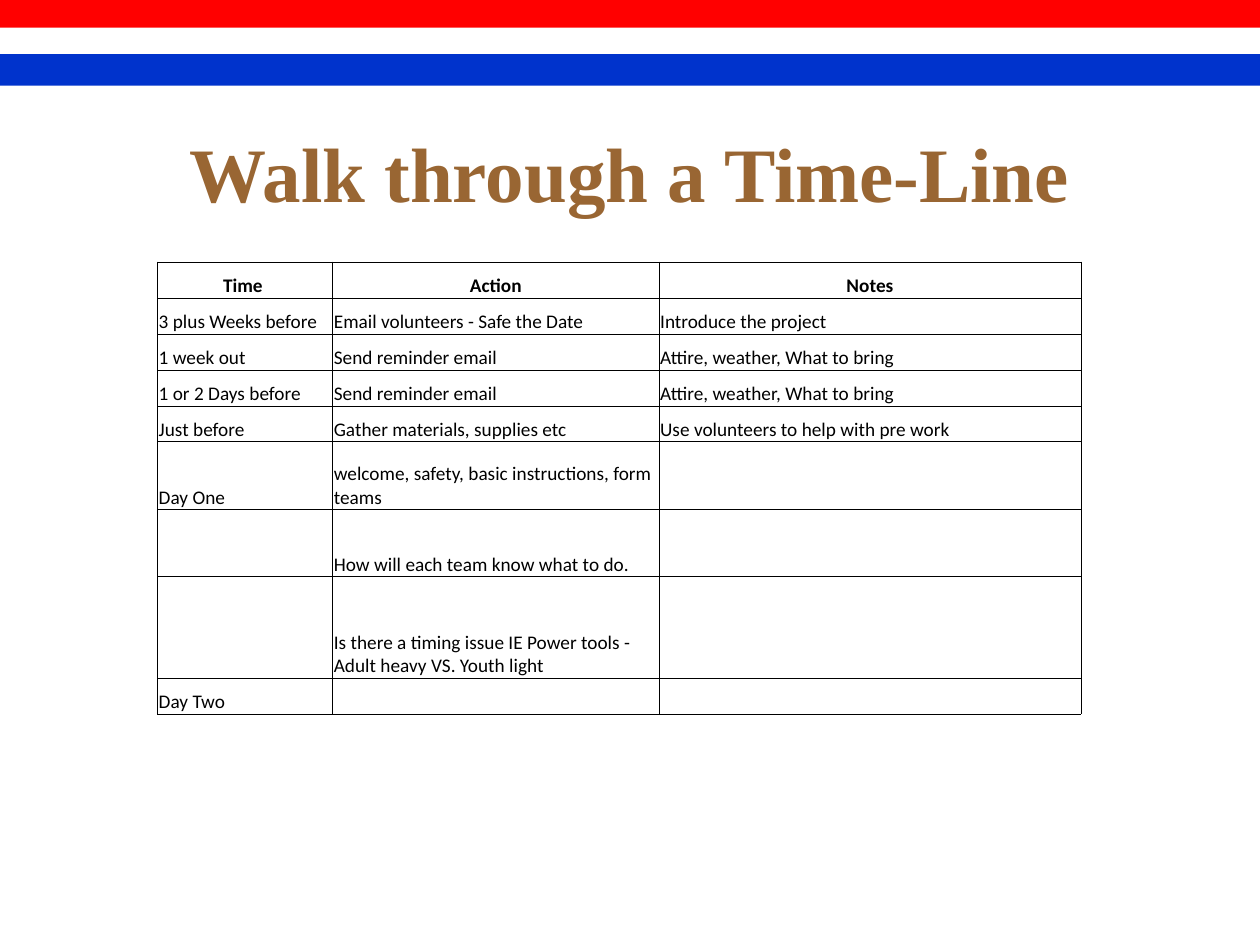
from dataclasses import dataclass
from typing import NamedTuple

from lxml.etree import SubElement
from pptx import Presentation
from pptx.dml.color import RGBColor as Color
from pptx.enum.shapes import MSO_SHAPE as Shape
from pptx.enum.text import MSO_ANCHOR as Anchor, PP_ALIGN as Align
from pptx.oxml.ns import qn
from pptx.util import Inches, Pt


@dataclass(frozen=True)
class Theme:
    red: str = "FF0000"
    white: str = "FFFFFF"
    blue: str = "0033CC"
    brown: str = "996633"
    black: str = "000000"
    title_font: str = "Times New Roman"
    table_font: str = "Calibri"
    title_size: int = 44
    table_size: int = 11
    border: float = 0.5


class Band(NamedTuple):
    top: float
    color: str


class Row(NamedTuple):
    weight: int
    time: str
    action: str
    notes: str


THEME = Theme()
WIDTH, HEIGHT = 10, 7.5
BAND_HEIGHT = 0.25
BANDS = [Band(0, THEME.red), Band(0.22, THEME.white), Band(0.43, THEME.blue)]
TABLE_LEFT, TABLE_TOP, TABLE_HEIGHT = 1.25, 2.08, 3.59
COLUMNS = [1.39, 2.59, 3.35]
SINGLE, DOUBLE, TRIPLE = 16, 30, 45
ROWS = [
    Row(SINGLE, "Time ", "Action", "Notes"),
    Row(SINGLE, "3 plus Weeks before", "Email volunteers - Safe the Date", "Introduce the project"),
    Row(SINGLE, "1 week out", "Send reminder email", "Attire, weather, What to bring"),
    Row(SINGLE, "1 or 2 Days before", "Send reminder email", "Attire, weather, What to bring"),
    Row(SINGLE, "Just before", "Gather materials, supplies etc", "Use volunteers to help with pre work"),
    Row(DOUBLE, "Day One", "welcome, safety, basic instructions, form teams", ""),
    Row(DOUBLE, "", "How will each team know what to do.", ""),
    Row(TRIPLE, "", "Is there a timing issue IE Power tools - Adult heavy VS. Youth light", ""),
    Row(SINGLE, "Day Two", "", ""),
]


def style_paragraph(para, font: str, size: int, color: str, bold: bool, align: Align) -> None:
    para.alignment = align
    para.font.name, para.font.size, para.font.bold = font, Pt(size), bold
    para.font.color.rgb = Color.from_string(color)


def draw_band(page, band: Band) -> None:
    box = page.shapes.add_shape(Shape.RECTANGLE, 0, Inches(band.top), Inches(WIDTH), Inches(BAND_HEIGHT))
    box.shadow.inherit = False
    box.fill.solid()
    box.fill.fore_color.rgb = Color.from_string(band.color)
    box.line.fill.background()


def draw_title(page, text: str) -> None:
    box = page.shapes.add_textbox(Inches(0.75), Inches(0.74), Inches(8.5), Inches(1.25))
    frame = box.text_frame
    frame.word_wrap = True
    frame.vertical_anchor = Anchor.MIDDLE
    frame.text = text
    style_paragraph(frame.paragraphs[0], THEME.title_font, THEME.title_size, THEME.brown, True, Align.CENTER)


def draw_borders(cell) -> None:
    properties = cell._tc.get_or_add_tcPr()
    for index, side in enumerate(("a:lnL", "a:lnR", "a:lnT", "a:lnB")):
        line = SubElement(properties, qn(side), w=str(Pt(THEME.border)))
        fill = SubElement(line, qn("a:solidFill"))
        SubElement(fill, qn("a:srgbClr"), val=THEME.black)
        properties.insert(index, line)


def fill_cell(cell, text: str, header: bool) -> None:
    cell.text = text
    cell.fill.background()
    cell.vertical_anchor = Anchor.BOTTOM
    cell.margin_left = cell.margin_right = cell.margin_top = Inches(0.01)
    cell.margin_bottom = 0
    para = cell.text_frame.paragraphs[0]
    align = Align.CENTER if header else Align.LEFT
    style_paragraph(para, THEME.table_font, THEME.table_size, THEME.black, header, align)
    if not text:
        SubElement(para._p, qn("a:endParaRPr"), sz=str(THEME.table_size * 100))
    draw_borders(cell)


def draw_table(page, rows: list[Row]) -> None:
    frame = page.shapes.add_table(
        len(rows), len(COLUMNS), Inches(TABLE_LEFT), Inches(TABLE_TOP), Inches(sum(COLUMNS)), Inches(TABLE_HEIGHT)
    )
    table = frame.table
    table.first_row = table.horz_banding = False
    for column, width in zip(table.columns, COLUMNS):
        column.width = Inches(width)
    total = sum(row.weight for row in rows)
    for index, row in enumerate(rows):
        table.rows[index].height = Inches(TABLE_HEIGHT * row.weight / total)
        for cell, text in zip(table.rows[index].cells, row[1:]):
            fill_cell(cell, text, header=index == 0)


def main() -> None:
    """Build the volunteer time-line slide."""
    deck = Presentation()
    deck.slide_width, deck.slide_height = Inches(WIDTH), Inches(HEIGHT)
    page = deck.slides.add_slide(deck.slide_layouts[6])
    for band in BANDS:
        draw_band(page, band)
    draw_title(page, "Walk through a Time-Line")
    draw_table(page, ROWS)
    deck.save("out.pptx")


if __name__ == "__main__":
    main()
